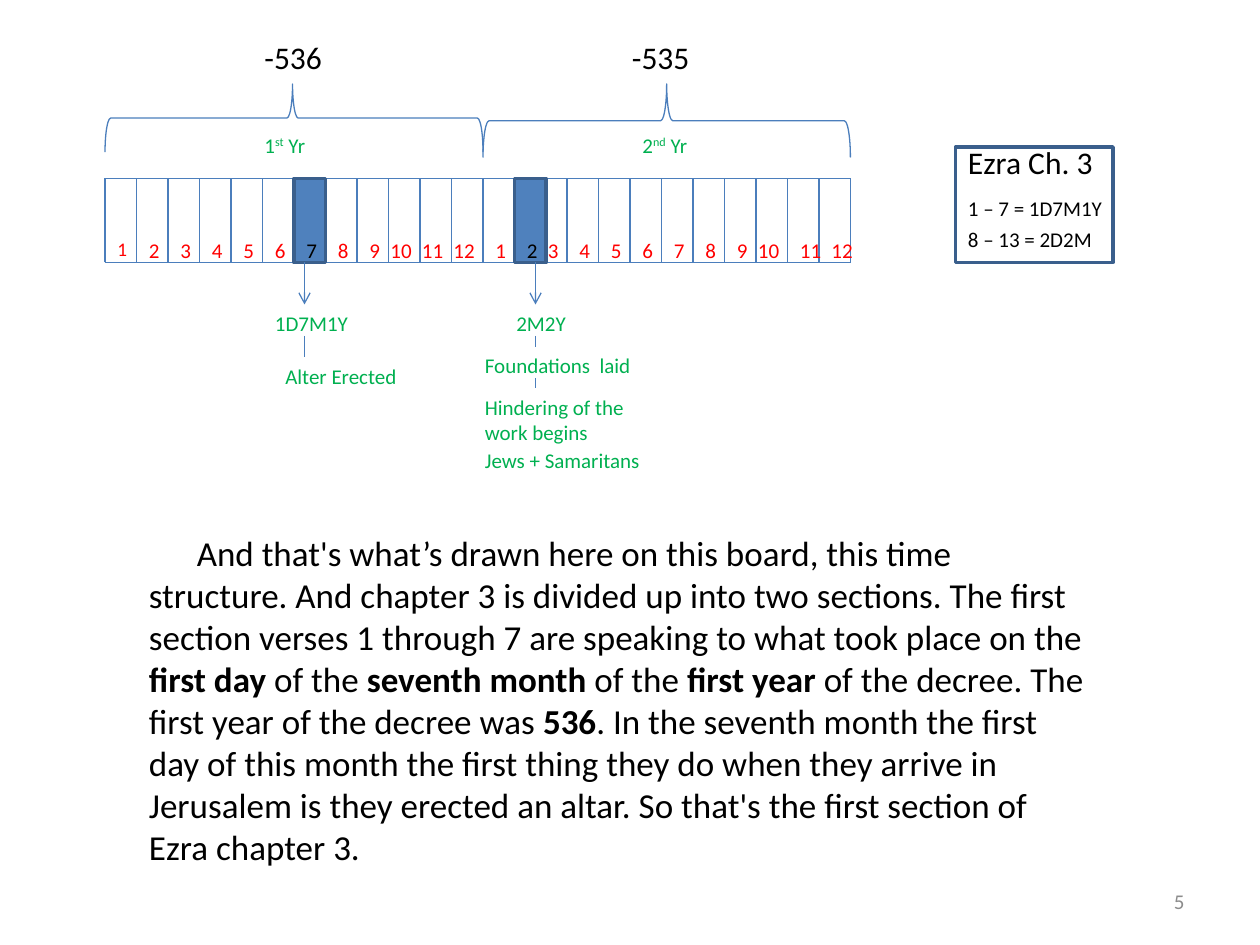
import pptx
import pptx.dml.color
import pptx.enum.shapes
import pptx.enum.text
import pptx.oxml
import pptx.oxml.ns
import pptx.util

COLORS = {"rule": "4B7EBC", "edge": "3A5F8C", "fill": "4F81BD", "black": "000000",
          "red": "FF0000", "green": "00B050", "gray": "8C8C8C"}
SHAPES = pptx.enum.shapes.MSO_SHAPE
TOP, LABEL_TOP, BOTTOM = 17, 22, 25
YEAR_ONE, YEAR_TWO, END, MONTH = 10, 46, 81, 3
STORY = [
    ("And that's what’s drawn here on this board, this time structure. And chapter 3 is "
     "divided up into two sections. The first section verses 1 through 7 are speaking to "
     "what took place on the ", {}),
    ("first day", {"bold": True}), (" of the ", {}),
    ("seventh month", {"bold": True}), (" of the ", {}),
    ("first year", {"bold": True}),
    (" of the decree. The first year of the decree was ", {}),
    ("536", {"bold": True}),
    (". In the seventh month the first day of this month the first thing they do when they "
     "arrive in Jerusalem is they erected an altar. So that's the first section of Ezra "
     "chapter 3.", {}),
]


def grid(*cells):
    """Turn counts of twelfth-inch grid cells into lengths."""
    return [pptx.util.Emu(round(cell * pptx.util.Inches(1) / 12)) for cell in cells]


def color(name):
    """Return the named colour of the palette."""
    return pptx.dml.color.RGBColor.from_string(COLORS[name])


def add_text(page, text, left, top, width, height=3.6, size=12, ink="green"):
    """Add a wrapped text box from a string or (text, font values) pairs."""
    box = page.shapes.add_textbox(*grid(left, top, width, height))
    box.text_frame.word_wrap = True
    para = box.text_frame.paragraphs[0]
    pieces = [(text, {})] if isinstance(text, str) else text
    for words, extra in pieces:
        span = para.add_run()
        span.text = words
        span.font.color.rgb = color(ink)
        values = {"name": "Calibri", "size": pptx.util.Pt(size), **extra}
        for key, value in values.items():
            if key == "baseline":
                span.font._element.set(key, value)
            else:
                setattr(span.font, key, value)
    return box


def add_rule(page, start, end, arrow=False):
    """Add a thin straight line, with an open arrowhead if asked."""
    line = page.shapes.add_connector(
        pptx.enum.shapes.MSO_CONNECTOR.STRAIGHT, *grid(*start, *end))
    line.line.color.rgb = color("rule")
    line.line.width = pptx.util.Pt(0.75)
    if arrow:
        head = pptx.oxml.ns.qn("a:tailEnd")
        line.line._get_or_add_ln().append(
            line._element.makeelement(head, {"type": "arrow"}))
    properties = line._element.spPr
    properties.append(properties.makeelement(pptx.oxml.ns.qn("a:effectLst"), {}))


def add_outline(page, kind, left, top, width, height, edge="edge", weight=2, fill=None):
    """Add a preset shape with a line and an optional fill."""
    shape = page.shapes.add_shape(kind, *grid(left, top, width, height))
    shape.shadow.inherit = False
    shape.line.color.rgb = color(edge)
    shape.line.width = pptx.util.Pt(weight)
    if fill:
        shape.fill.solid()
        shape.fill.fore_color.rgb = color(fill)
    else:
        shape.fill.background()
    return shape


def add_brace(page, kind, left, top, width, height, rotation, adjustments=()):
    """Add a thin brace turned to open downwards."""
    brace = add_outline(page, kind, left, top, width, height, "rule", 0.75)
    brace.rotation = rotation
    for index, value in enumerate(adjustments):
        brace.adjustments[index] = value


def add_calendar(page):
    """Draw the two-year strip with its month dividers and numbers."""
    for level in (TOP, BOTTOM):
        add_rule(page, (YEAR_ONE, level), (END, level))
    dividers = [*range(YEAR_ONE, 53, MONTH), *range(54, END + 1, MONTH)]
    for column in dividers:
        add_rule(page, (column, BOTTOM), (column, TOP))
    for month in range(1, 13):
        step = MONTH * (month - 1)
        first = YEAR_ONE + step - (month > 9)
        second = YEAR_TWO + step - (month > 2) - (month == 10)
        size = 11 if month == 1 else 12
        add_text(page, str(month), first, LABEL_TOP, 8, size=size, ink="red")
        add_text(page, str(month), second, LABEL_TOP, 8, ink="red")
    for column, month in ((28, "7"), (49, "2")):
        add_outline(page, SHAPES.RECTANGLE, column, TOP, MONTH, BOTTOM - TOP, fill="fill")
        add_text(page, month, column, LABEL_TOP, 8, ink="black")


def add_years(page):
    """Add the braces with the dates and year names."""
    add_brace(page, SHAPES.LEFT_BRACE, 24.75, -6.75, 6.5, 36, 90, (0.083, 0.504))
    add_brace(page, SHAPES.RIGHT_BRACE, 60, -6, 7, 35, 270)
    years = (("-536", 24, "1", "st", 24), ("-535", 59, "2", "nd", 60))
    for date, date_left, number, suffix, name_left in years:
        add_text(page, date, date_left, 3, 10, 4.8, 18, "black")
        name = [(number, {}), (suffix, {"baseline": "30000"}), (" Yr", {})]
        add_text(page, name, name_left, 12, 20)


def add_events(page):
    """Add the arrows and the events that hang below them."""
    for column in (29, 51):
        add_rule(page, (column, BOTTOM), (column, 29), arrow=True)
    for column, start, end in ((29, 32, 34), (51, 32, 33), (51, 36, 37)):
        add_rule(page, (column, start), (column, end))
    events = (("1D7M1Y", 25, 29, 22), ("Alter Erected", 26, 34, 13),
              ("2M2Y", 48, 29, 23), ("Foundations  laid", 45, 33, 26),
              ("Hindering of the work begins", 45, 37, 17),
              ("Jews + Samaritans", 45, 42, 42))
    for text, left, top, width in events:
        add_text(page, text, left, top, width)


def add_key(page):
    """Add the framed key to the chapter."""
    add_text(page, "Ezra Ch. 3", 91, 13, 26, 4.8, 18, "black")
    for text, top in (("1 – 7 = 1D7M1Y", 18), ("8 – 13 = 2D2M", 21)):
        add_text(page, text, 91, top, 26, ink="black")
    add_outline(page, SHAPES.RECTANGLE, 91, 14, 15, 11)


def add_story(page):
    """Add the paragraph with its first line indented."""
    box = add_text(page, STORY, 13, 50, 92, 33.5, 20, "black")
    properties = box.text_frame.paragraphs[0]._p.get_or_add_pPr()
    properties.set("indent", str(pptx.util.Inches(0.38)))


def add_page_number(page):
    """Add the page number at the lower right."""
    box = add_text(page, "5", 86, 83.4, 28, 4.8, ink="gray")
    box.text_frame.vertical_anchor = pptx.enum.text.MSO_ANCHOR.MIDDLE
    box.text_frame.paragraphs[0].alignment = pptx.enum.text.PP_ALIGN.RIGHT


def main():
    """Build and save the slide."""
    deck = pptx.Presentation()
    deck.slide_width, deck.slide_height = grid(120, 90)
    page = deck.slides.add_slide(deck.slide_layouts[6])
    for build in (add_calendar, add_years, add_events, add_key, add_story, add_page_number):
        build(page)
    deck.save("out.pptx")


if __name__ == "__main__":
    main()
